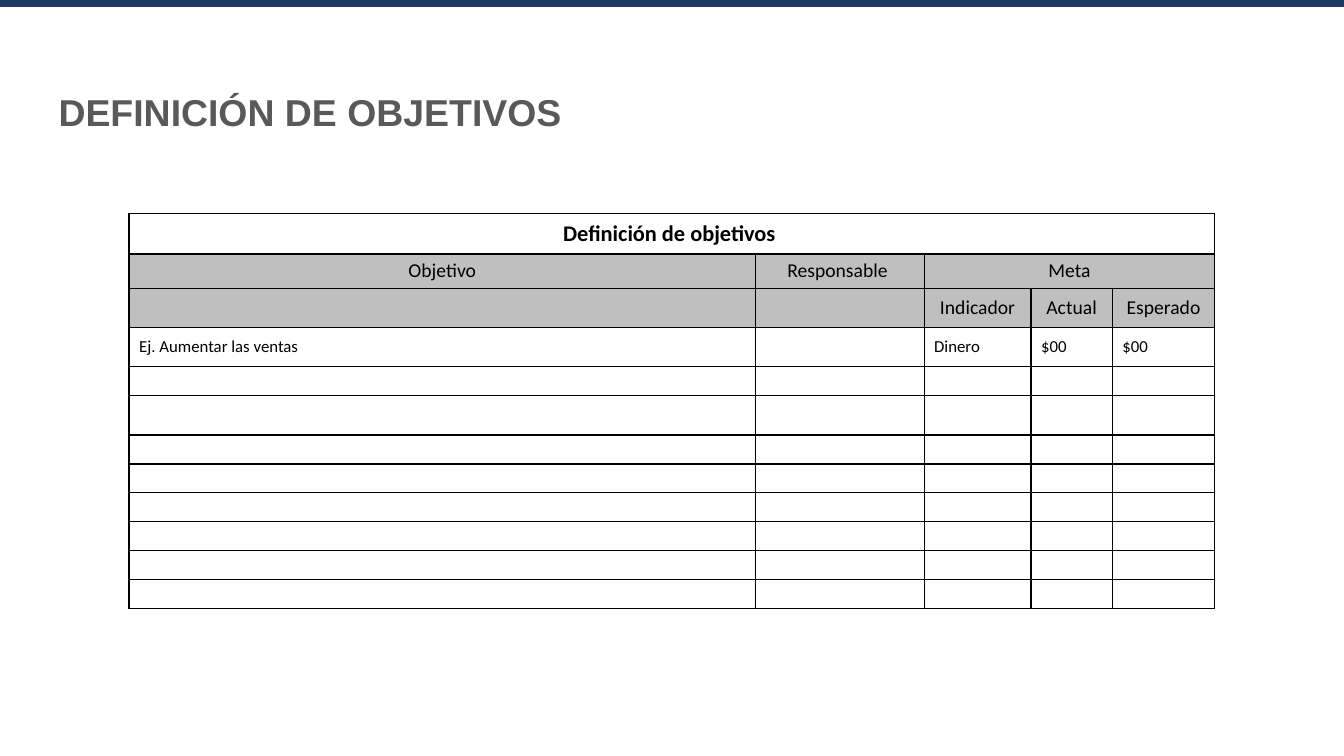
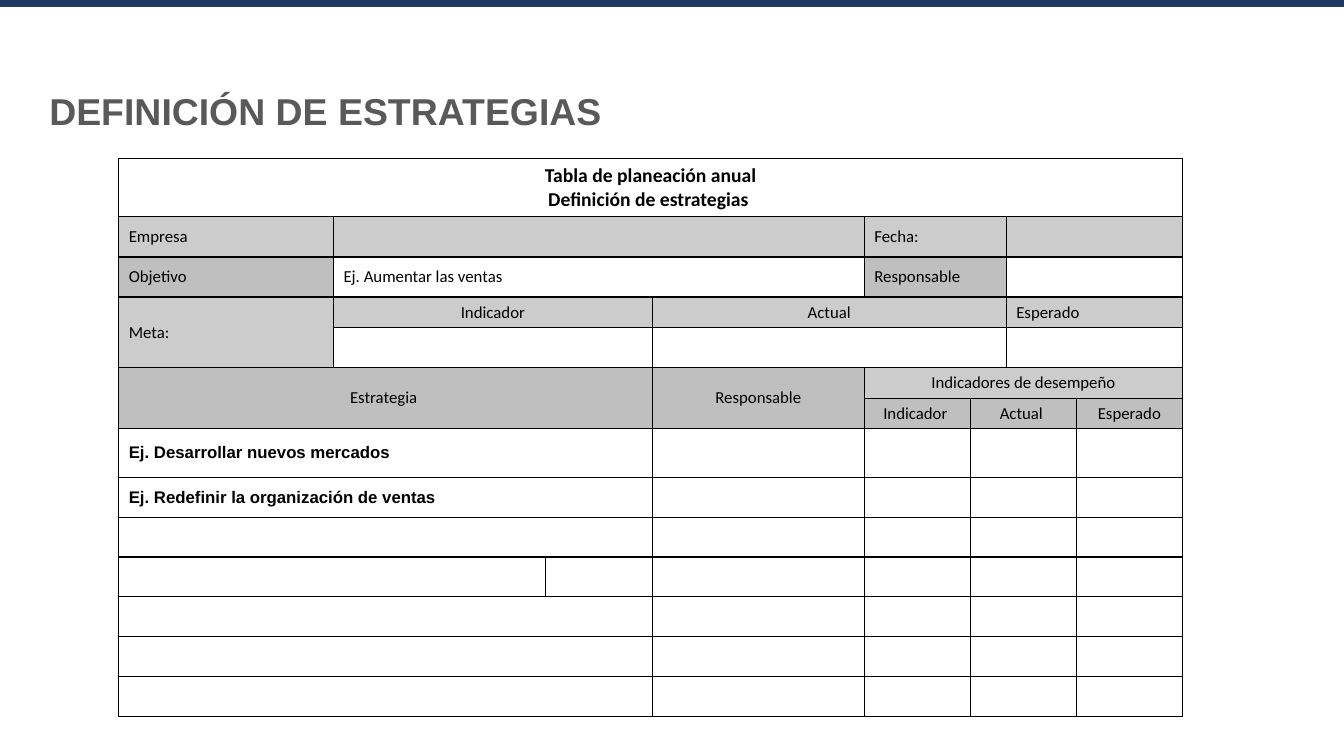
"""Build two planning slides: objectives and strategies."""
from dataclasses import dataclass
from pptx import Presentation
from pptx.dml.color import RGBColor
from pptx.enum import shapes, text
from pptx.oxml import parse_xml
from pptx.oxml import ns
from pptx.util import Pt


@dataclass(frozen=True)
class Theme:
    """Colours, fonts and type sizes in points."""
    band: str = "203864"
    title: str = "595959"
    ink: str = "000000"
    white: str = "FFFFFF"
    grey: str = "BFBFBF"
    light: str = "CCCCCC"
    head: str = "Arial"
    body: str = "Calibri"
    big: float = 26.7
    cap: float = 16
    mid: float = 14
    small: float = 12
    blank: float = 8
    rule: float = 1


T = Theme()
WIDE, HIGH, BAND = 960, 540, 5
LEFT, MID = text.PP_ALIGN.LEFT, text.PP_ALIGN.CENTER

LOOKS = {
    "cap": (T.white, T.body, T.cap, True, MID),
    "cap2": (T.white, T.body, T.mid, True, MID),
    "head": (T.grey, T.body, T.mid, False, MID),
    "label": (T.grey, T.body, T.small, False, LEFT),
    "mid": (T.grey, T.body, T.small, False, MID),
    "light": (T.light, T.body, T.small, False, LEFT),
    "lmid": (T.light, T.body, T.small, False, MID),
    "text": (T.white, T.body, T.small, False, LEFT),
    "plan": (T.white, T.head, T.small, True, LEFT),
}


def item(words="", look="text", wide=1, tall=1):
    """Describe one cell and its span."""
    return words, look, wide, tall


def plan(words=""):
    """Describe a strategy row with blank result cells."""
    return [item(words, "plan", 3), item(), item(), item(wide=2), item()]


GOALS = [
    (29.1, [item("Definición de objetivos ", "cap", 5)]),
    (24.4, [item("Objetivo", "head"), item("Responsable ", "head"),
            item("Meta", "head", 3)]),
    (28, [item(name, "head")
          for name in ("", "", "Indicador", "Actual", "Esperado")]),
    (28, [item(name)
          for name in ("Ej. Aumentar las ventas", "", "Dinero", "$00", "$00")]),
    *[(size, [item()] * 5) for size in (20.7, 28.2) + (20.7,) * 6],
]

PLANS = [
    (41.4, [item("Tabla de planeación anual\nDefinición de estrategias ",
                 "cap2", 8)]),
    (28.8, [item("Empresa", "light"), item("", "light", 3),
            item("Fecha:", "light", 2), item("", "light", 2)]),
    (28.6, [item("Objetivo", "label"), item("Ej. Aumentar las ventas", wide=3),
            item("Responsable", "label", 2), item(wide=2)]),
    (21.8, [item("Meta:", "light", 1, 2), item("Indicador", "lmid", 2),
            item("Actual", "lmid", 3), item("Esperado", "light", 2)]),
    (28.6, [item(wide=2), item(wide=3), item(wide=2)]),
    (21.8, [item("Estrategia ", "mid", 3, 2), item("Responsable", "mid", 1, 2),
            item("Indicadores de desempeño", "lmid", 4)]),
    (21.8, [item("Indicador ", "mid"), item("Actual ", "mid", 2),
            item("Esperado", "mid")]),
    (34.6, plan("Ej. Desarrollar nuevos mercados")),
    (28.5, plan("Ej. Redefinir la organización de ventas")),
    (28.5, plan()),
    (28.5, [item(wide=2), item()] + plan()[1:]),
    *[(28.5, plan()) for _ in range(3)],
]

SLIDES = [
    ("DEFINICIÓN DE OBJETIVOS", (34.6, 59.8), (92.2, 152.4),
     (447.4, 120.5, 76.4, 58, 73.2), GOALS),
    ("DEFINICIÓN DE ESTRATEGIAS", (28, 59), (84.8, 113.4),
     (153.4, 151.6, 76.2, 151.4, 75.7, 25.7, 50, 76), PLANS),
]


def style(part, font, size, bold, ink, align):
    """Format every paragraph and run of a text frame."""
    for para in part.paragraphs:
        para.alignment = align
        for run in para.runs:
            run.font.name, run.font.size = font, Pt(size)
            run.font.bold = bold
            run.font.color.rgb = RGBColor.from_string(ink)


def frame(cell, fill):
    """Give a cell its rules and its fill."""
    props = cell._tc.get_or_add_tcPr()
    for side in "LRTB":
        props.append(parse_xml(
            f'<a:ln{side} {ns.nsdecls("a")} w="{Pt(T.rule)}"><a:solidFill>'
            f'<a:srgbClr val="{T.ink}"/></a:solidFill></a:ln{side}>'))
    cell.fill.solid()
    cell.fill.fore_color.rgb = RGBColor.from_string(fill)


def write(cell, words, look):
    """Put text into a cell, or keep a blank one low."""
    _, font, size, bold, align = look
    cell.vertical_anchor = text.MSO_ANCHOR.MIDDLE
    cell.text_frame.text = words
    style(cell.text_frame, font, size, bold, T.ink, align)
    if not words:
        para = cell.text_frame.paragraphs[0]
        para._p.append(parse_xml(
            f'<a:endParaRPr {ns.nsdecls("a")} sz="{int(T.blank * 100)}"/>'))


def grid(slide, spot, cols, rows):
    """Draw a table whose cells flow around the spans."""
    sizes = [size for size, _ in rows]
    table = slide.shapes.add_table(
        len(rows), len(cols), *map(Pt, spot),
        Pt(sum(cols)), Pt(sum(sizes))).table
    table.first_row = table.horz_banding = False
    for col, size in zip(table.columns, cols):
        col.width = Pt(size)
    for row, size in zip(table.rows, sizes):
        row.height = Pt(size)
    for r, (_, cells) in enumerate(rows):
        c = 0
        for words, name, wide, tall in cells:
            while table.cell(r, c).is_spanned:
                c += 1
            cell, look = table.cell(r, c), LOOKS[name]
            for y in range(r, r + tall):
                for x in range(c, c + wide):
                    frame(table.cell(y, x), look[0])
            if wide * tall > 1:
                cell.merge(table.cell(r + tall - 1, c + wide - 1))
            write(cell, words, look)
            c += wide


def head(slide, words, spot):
    """Place and format the slide title."""
    title = slide.shapes.title
    title.left, title.top = map(Pt, spot)
    title.width, title.height = Pt(524), Pt(40)
    part = title.text_frame
    part.text = words
    part.auto_size = text.MSO_AUTO_SIZE.NONE
    part.vertical_anchor = text.MSO_ANCHOR.TOP
    style(part, T.head, T.big, True, T.title, LEFT)


def share(deck, slide):
    """Draw the top band and move it to the master."""
    band = slide.shapes.add_shape(
        shapes.MSO_SHAPE.RECTANGLE, 0, 0, Pt(WIDE), Pt(BAND))
    band.shadow.inherit = False
    band.fill.solid()
    band.fill.fore_color.rgb = RGBColor.from_string(T.band)
    band.line.fill.background()
    deck.slide_master.shapes.element.insert(2, band.element)


def main():
    """Build and save the deck."""
    deck = Presentation()
    deck.slide_width, deck.slide_height = Pt(WIDE), Pt(HIGH)
    for n, (words, place, spot, cols, rows) in enumerate(SLIDES):
        slide = deck.slides.add_slide(deck.slide_layouts[5])
        if n == 0:
            share(deck, slide)
        grid(slide, spot, cols, rows)
        head(slide, words, place)
    deck.save("out.pptx")


if __name__ == "__main__":
    main()
